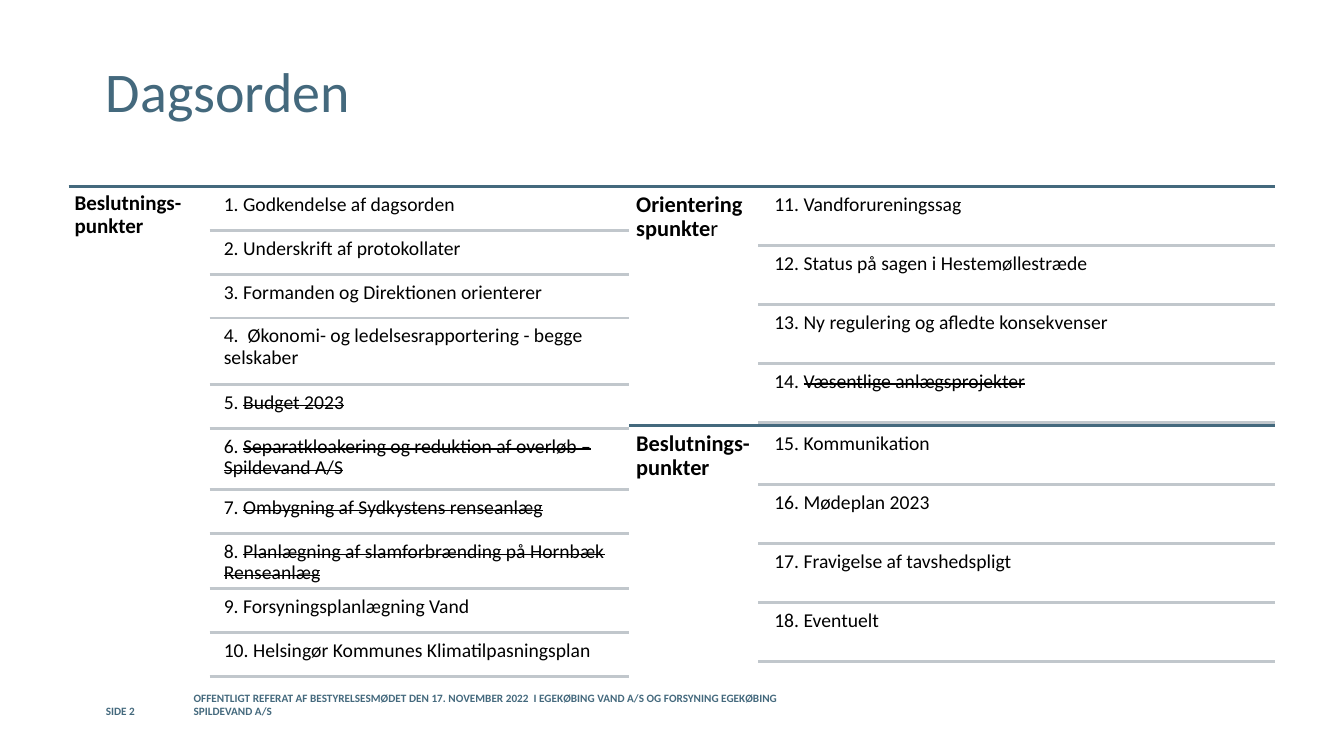
from lxml.etree import SubElement
from pptx import Presentation
from pptx.dml.color import RGBColor
from pptx.enum.shapes import MSO_CONNECTOR
from pptx.enum.text import MSO_ANCHOR, MSO_AUTO_SIZE, PP_ALIGN
from pptx.oxml.ns import qn
from pptx.util import Inches, Pt

COLORS = {"accent": "44697D", "divider": "C1C7CC", "text": "000000"}
FONT = "Calibri"

TITLE = "Dagsorden"
PAGE = "SIDE 2"
FOOTER = ("OFFENTLIGT REFERAT AF BESTYRELSESMØDET DEN 17. NOVEMBER 2022  I EGEKØBING "
          "VAND A/S OG FORSYNING EGEKØBING SPILDEVAND A/S")

# Items: (number and open text, struck text, relative row height)
SECTIONS = [
    {"heading": ("Beslutnings-punkter", ""), "size": 15, "inset": 0.06,
     "left": 0.68, "divider_left": 2.08, "item_left": 2.16, "right": 6.24,
     "top": 1.85, "height": 4.89, "rows_height": 4.86,
     "items": [
         ("1. Godkendelse af dagsorden", "", 1),
         ("2. Underskrift af protokollater", "", 1),
         ("3. Formanden og Direktionen orienterer", "", 1),
         ("4.  Økonomi- og ledelsesrapportering - begge selskaber", "", 1.52),
         ("5. ", "Budget 2023", 1),
         ("6. ", "Separatkloakering og reduktion af overløb – Spildevand A/S", 1.4),
         ("7. ", "Ombygning af Sydkystens renseanlæg", 1),
         ("8. ", "Planlægning af slamforbrænding på Hornbæk Renseanlæg", 1.26),
         ("9. Forsyningsplanlægning Vand", "", 1),
         ("10. Helsingør Kommunes Klimatilpasningsplan", "", 1)]},
]
RIGHT_SIDE = {"size": 16, "inset": 0.07, "left": 6.24, "divider_left": 7.52,
              "item_left": 7.62, "right": 12.65, "height": 2.37, "rows_height": 2.34}
SECTIONS += [
    {**RIGHT_SIDE, "heading": ("Orienteringspunkte", "r"), "top": 1.85,
     "items": [
         ("11. Vandforureningssag", "", 1),
         ("12. Status på sagen i Hestemøllestræde", "", 1),
         ("13. Ny regulering og afledte konsekvenser", "", 1),
         ("14. ", "Væsentlige anlægsprojekter", 1)]},
    {**RIGHT_SIDE, "heading": ("Beslutnings-punkter", ""), "top": 4.22,
     "items": [
         ("15. Kommunikation", "", 1),
         ("16. Mødeplan 2023", "", 1),
         ("17. Fravigelse af tavshedspligt", "", 1),
         ("18. Eventuelt", "", 1)]},
]
ROW_GAP = 0.02


def place(shape, left, top, width, height):
    shape.left, shape.top, shape.width, shape.height = map(
        Inches, (left, top, width, height))


def set_frame(frame, inset, anchor):
    frame.word_wrap = True
    frame.auto_size = MSO_AUTO_SIZE.NONE
    frame.vertical_anchor = anchor
    frame.margin_left = frame.margin_right = Inches(inset)
    frame.margin_top = frame.margin_bottom = Inches(inset)


def style(run, size, color, bold=False):
    run.font.name = FONT
    run.font.size = Pt(size)
    run.font.bold = bold
    run.font.color.rgb = RGBColor.from_string(COLORS[color])


def add_text(slide, box, parts, size, color="text", bold=False, inset=0.0,
             anchor=MSO_ANCHOR.TOP, line_spacing=1.0):
    """Add a one-paragraph text box and return its runs, one per non-empty part."""
    frame = slide.shapes.add_textbox(*map(Inches, box)).text_frame
    set_frame(frame, inset, anchor)
    paragraph = frame.paragraphs[0]
    paragraph.line_spacing = line_spacing
    for part in filter(None, parts):
        run = paragraph.add_run()
        run.text = part
        style(run, size, color, bold)
    return paragraph.runs


def add_rule(slide, left, right, y, color):
    rule = slide.shapes.add_connector(
        MSO_CONNECTOR.STRAIGHT, Inches(left), Inches(y), Inches(right), Inches(y))
    rule.line.color.rgb = RGBColor.from_string(COLORS[color])
    rule.line.width = Pt(2)
    SubElement(rule._element.spPr, qn("a:effectLst"))


def add_section(slide, section):
    left, right, top = section["left"], section["right"], section["top"]
    divider_left, item_left = section["divider_left"], section["item_left"]
    add_rule(slide, left, right, top, "accent")
    heading = add_text(
        slide, (left, top, divider_left - left, section["height"]), section["heading"],
        section["size"], bold=True, inset=section["inset"], line_spacing=0.9)
    for ending in heading[1:]:
        ending.font.bold = False

    unit = section["rows_height"] / sum(share for _, _, share in section["items"])
    for label, struck, share in section["items"]:
        row = unit * share
        runs = add_text(
            slide, (item_left, top + ROW_GAP, right - item_left, row - ROW_GAP),
            (label, struck), 14, inset=0.06, line_spacing=0.9)
        for run in runs[1:]:
            run._r.get_or_add_rPr().set("strike", "sngStrike")
        top += row
        add_rule(slide, divider_left, right, top, "divider")


def main():
    deck = Presentation()
    deck.slide_width, deck.slide_height = Inches(13.33), Inches(7.5)
    slide = deck.slides.add_slide(deck.slide_layouts[5])

    for section in SECTIONS:
        add_section(slide, section)

    title = slide.shapes.title
    place(title, 1.05, 0.21, 11.84, 1.02)
    title.text_frame.text = TITLE
    set_frame(title.text_frame, 0, MSO_ANCHOR.BOTTOM)
    heading = title.text_frame.paragraphs[0]
    heading.alignment = PP_ALIGN.LEFT
    style(heading.runs[0], 40, "accent")

    for left, width, wording in ((1.05, 0.68, PAGE), (1.92, 6.06, FOOTER)):
        add_text(slide, (left, 6.93, width, 0.19), (wording,), 8, "accent",
                 bold=True, anchor=MSO_ANCHOR.BOTTOM)

    deck.save("out.pptx")


if __name__ == "__main__":
    main()
